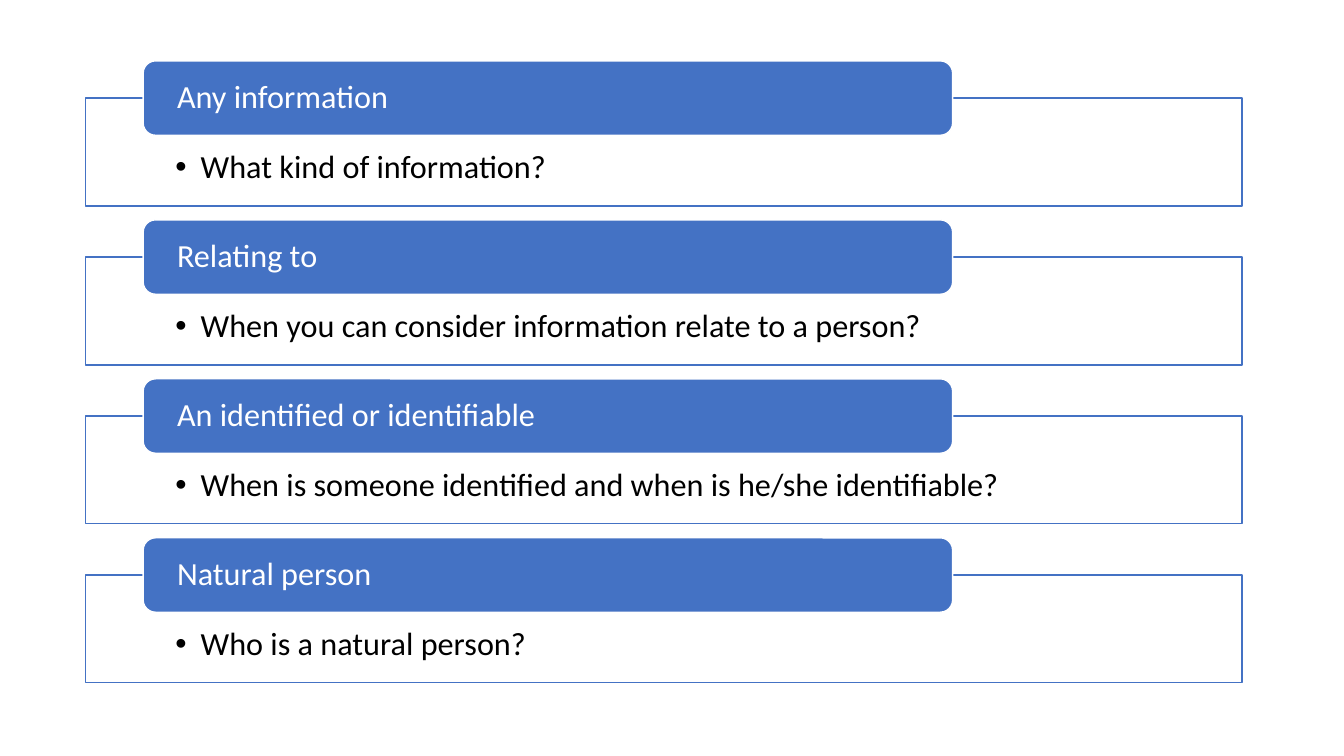
from pptx import Presentation
from pptx.dml.color import RGBColor
from pptx.enum.shapes import MSO_SHAPE
from pptx.enum.text import MSO_ANCHOR, PP_ALIGN
from pptx.oxml.ns import qn
from pptx.util import Inches, Pt
from lxml.etree import SubElement

QUESTIONS = [
    ("Any information", "What kind of information?"),
    ("Relating to", "When you can consider information relate to a person?"),
    ("An identified or identifiable",
     "When is someone identified and when is he/she identifiable?"),
    ("Natural person", "Who is a natural person?"),
]
TOP, PITCH = 8.05, 21.03


def rgb(value):
    return RGBColor.from_string(value)


class Deck:
    font, size = "Calibri", 23
    blue, white, black = "4472C4", "FFFFFF", "000000"

    def __init__(self):
        self.prs = Presentation()
        self.prs.slide_width = Inches(13.33)
        self.prs.slide_height = Inches(7.5)
        self.slide = self.prs.slides.add_slide(self.prs.slide_layouts[6])

    def box(self, kind, left, top, width, height, fill, line):
        across, down = self.prs.slide_width / 100, self.prs.slide_height / 100
        sp = self.slide.shapes.add_shape(
            kind, int(left * across), int(top * down),
            int(width * across), int(height * down))
        sp.shadow.inherit = False
        sp.fill.solid()
        sp.fill.fore_color.rgb = rgb(fill)
        sp.line.color.rgb = rgb(line)
        sp.line.width = Pt(1)
        return sp

    def label(self, sp, text, color, anchor, insets):
        tf = sp.text_frame
        tf.word_wrap = True
        tf.vertical_anchor = anchor
        side, top, bottom = insets
        tf.margin_left = tf.margin_right = Inches(side)
        tf.margin_top, tf.margin_bottom = Inches(top), Inches(bottom)
        p = tf.paragraphs[0]
        p.text = text
        p.alignment = PP_ALIGN.LEFT
        p.line_spacing = 0.9
        font = p.runs[0].font
        font.name, font.size = self.font, Pt(self.size)
        font.color.rgb = rgb(color)
        return p

    def bullet(self, p):
        p.level = 1
        pPr = p._p.get_or_add_pPr()
        pPr.set("marL", str(Inches(0.25)))
        pPr.set("indent", str(-Inches(0.25)))
        SubElement(pPr, qn("a:buFont"), typeface="Arial")
        SubElement(pPr, qn("a:buChar"), char="•")

    def question(self, top, text):
        sp = self.box(MSO_SHAPE.RECTANGLE, 6.38, top, 86.03, 14.27,
                      self.white, self.blue)
        color = sp._element.spPr.find(qn("a:solidFill"))[0]
        SubElement(color, qn("a:alpha"), val="90000")
        p = self.label(sp, text, self.black, MSO_ANCHOR.TOP, (0.89, 0.52, 0.18))
        self.bullet(p)

    def header(self, top, text):
        sp = self.box(MSO_SHAPE.ROUNDED_RECTANGLE, 10.65, top, 60.23, 9.84,
                      self.blue, self.white)
        self.label(sp, text, self.white, MSO_ANCHOR.MIDDLE, (0.3, 0, 0))


def main():
    deck = Deck()
    for i, (title, question) in enumerate(QUESTIONS):
        top = TOP + i * PITCH
        deck.question(top + 4.92, question)
        deck.header(top, title)
    deck.prs.save("out.pptx")


if __name__ == "__main__":
    main()
